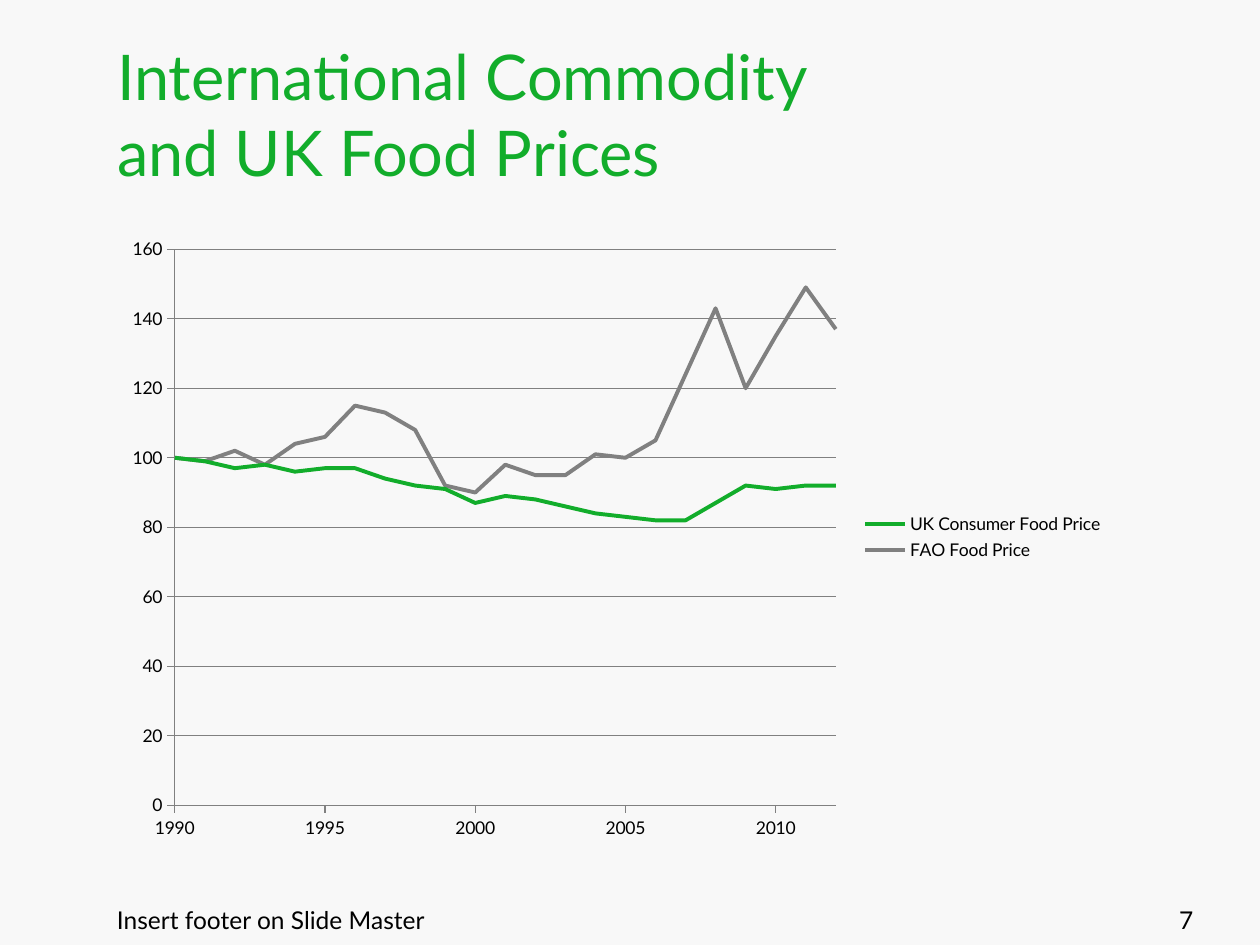
from lxml import etree
from pptx import Presentation
from pptx.chart.data import XyChartData
from pptx.dml.color import RGBColor
from pptx.enum.chart import XL_CHART_TYPE, XL_LEGEND_POSITION, XL_MARKER_STYLE, XL_TICK_MARK
from pptx.enum.text import MSO_ANCHOR, PP_ALIGN
from pptx.oxml.ns import qn
from pptx.util import Inches, Pt

SCATTER = XL_CHART_TYPE.XY_SCATTER_LINES_NO_MARKERS
LEGEND_RIGHT = XL_LEGEND_POSITION.RIGHT
NO_MARKER = XL_MARKER_STYLE.NONE
TICK_OUT, TICK_NONE = XL_TICK_MARK.OUTSIDE, XL_TICK_MARK.NONE
LEFT, RIGHT = PP_ALIGN.LEFT, PP_ALIGN.RIGHT
TOP, BOTTOM = MSO_ANCHOR.TOP, MSO_ANCHOR.BOTTOM

FONT = "Lato"
GREEN, GREY, BLACK, PAPER = "12AD2B", "808080", "000000", "F8F8F8"
WIDTH, HEIGHT = 10, 7.5
MARGIN = 0.83
FOOTER_TOP, FOOTER_HEIGHT = 7.13, 0.52

YEARS = range(1990, 2013)
PRICES = {
    "UK Consumer Food Price": (GREEN, [
        100, 99, 97, 98, 96, 97, 97, 94, 92, 91, 87, 89,
        88, 86, 84, 83, 82, 82, 87, 92, 91, 92, 92]),
    "FAO Food Price": (GREY, [
        100, 99, 102, 98, 104, 106, 115, 113, 108, 92, 90, 98,
        95, 95, 101, 100, 105, 124, 143, 120, 135, 149, 137]),
}


def color(value):
    return RGBColor.from_string(value)


def style_font(font, size, value):
    font.name = FONT
    font.size = Pt(size)
    font.color.rgb = color(value)


def style_line(line, value, width):
    line.color.rgb = color(value)
    line.width = Pt(width)


def add_title(slide, box, lines):
    title = slide.shapes.title
    title.left, title.top, title.width, title.height = map(Inches, box)
    frame = title.text_frame
    frame.word_wrap = False
    frame.vertical_anchor = BOTTOM
    paragraph = frame.paragraphs[0]
    paragraph.alignment = LEFT
    for index, line in enumerate(lines):
        if index:
            paragraph.add_line_break()
        run = paragraph.add_run()
        run.text = line
        style_font(run.font, 36, GREEN)


def add_footer_text(slide, box, text, alignment):
    frame = slide.shapes.add_textbox(*map(Inches, box)).text_frame
    frame.word_wrap = True
    frame.vertical_anchor = TOP
    paragraph = frame.paragraphs[0]
    paragraph.alignment = alignment
    run = paragraph.add_run()
    run.text = text
    style_font(run.font, 14, BLACK)


def style_axis(axis, low, high, step, gridlines):
    axis.minimum_scale, axis.maximum_scale, axis.major_unit = low, high, step
    axis.major_tick_mark, axis.minor_tick_mark = TICK_OUT, TICK_NONE
    axis.has_major_gridlines = gridlines
    axis.tick_labels.number_format = "General"
    axis.tick_labels.number_format_is_linked = False
    style_line(axis.format.line, GREY, 0.75)
    if gridlines:
        style_line(axis.major_gridlines.format.line, GREY, 0.75)


def place_plot(chart, **shares):
    """Fix the inner plot area as shares of the chart's size."""
    plot_area = chart.element.find(".//" + qn("c:plotArea"))
    layout = plot_area.find(qn("c:layout"))
    if layout is None:
        layout = etree.Element(qn("c:layout"))
        plot_area.insert(0, layout)
    manual = etree.SubElement(layout, qn("c:manualLayout"))
    settings = {"layoutTarget": "inner", "xMode": "edge", "yMode": "edge", **shares}
    for tag, value in settings.items():
        etree.SubElement(manual, qn("c:" + tag)).set("val", str(value))


def add_price_chart(slide, box):
    data = XyChartData()
    for name, (_, prices) in PRICES.items():
        series = data.add_series(name)
        for year, price in zip(YEARS, prices):
            series.add_data_point(year, price)
    chart = slide.shapes.add_chart(SCATTER, *map(Inches, box), data).chart
    style_font(chart.font, 10, BLACK)
    chart.has_title = False
    chart.has_legend = True
    chart.legend.position = LEGEND_RIGHT
    chart.legend.include_in_layout = False
    style_axis(chart.category_axis, YEARS[0], YEARS[-1], 5, False)
    style_axis(chart.value_axis, 0, 160, 20, True)
    plot = chart.plots[0]
    plot.vary_by_categories = False
    for series, (line_color, _) in zip(plot.series, PRICES.values()):
        series.smooth = False
        series.marker.style = NO_MARKER
        style_line(series.format.line, line_color, 2.25)
    place_plot(chart, x=0.06, y=0.04, w=0.66, h=0.89)


def main():
    deck = Presentation()
    deck.slide_width, deck.slide_height = Inches(WIDTH), Inches(HEIGHT)
    slide = deck.slides.add_slide(deck.slide_layouts[5])
    slide.background.fill.solid()
    slide.background.fill.fore_color.rgb = color(PAPER)

    add_title(slide, (MARGIN, 0.3, 6.77, 1.25),
              ["International Commodity", "and UK Food Prices"])
    add_price_chart(slide, (0.91, 1.78, 7.95, 4.96))
    add_footer_text(slide, (MARGIN, FOOTER_TOP, 6.93, FOOTER_HEIGHT),
                    "Insert footer on Slide Master", LEFT)
    add_footer_text(slide, (8.83, FOOTER_TOP, 0.74, FOOTER_HEIGHT), "7", RIGHT)
    deck.save("out.pptx")


if __name__ == "__main__":
    main()
